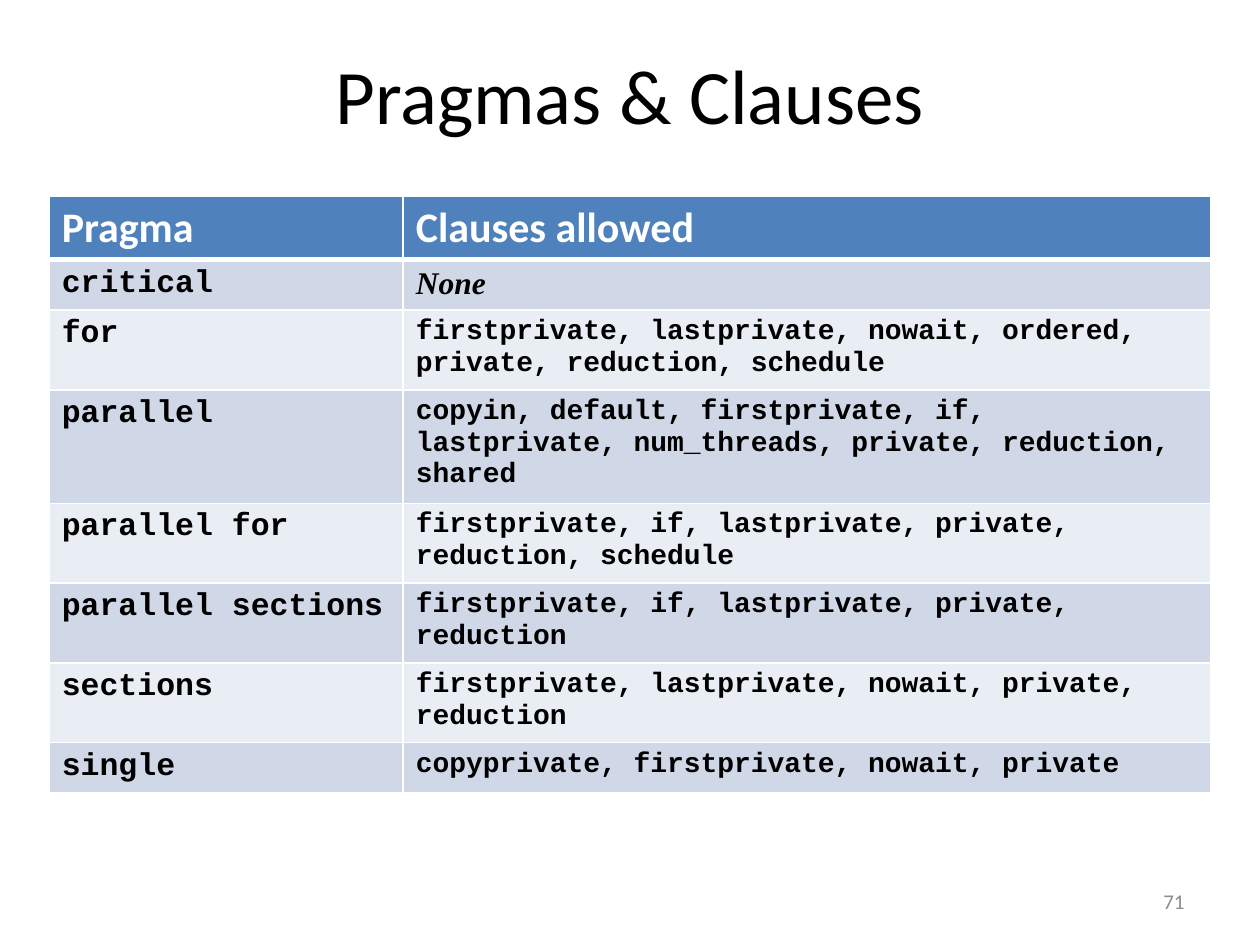
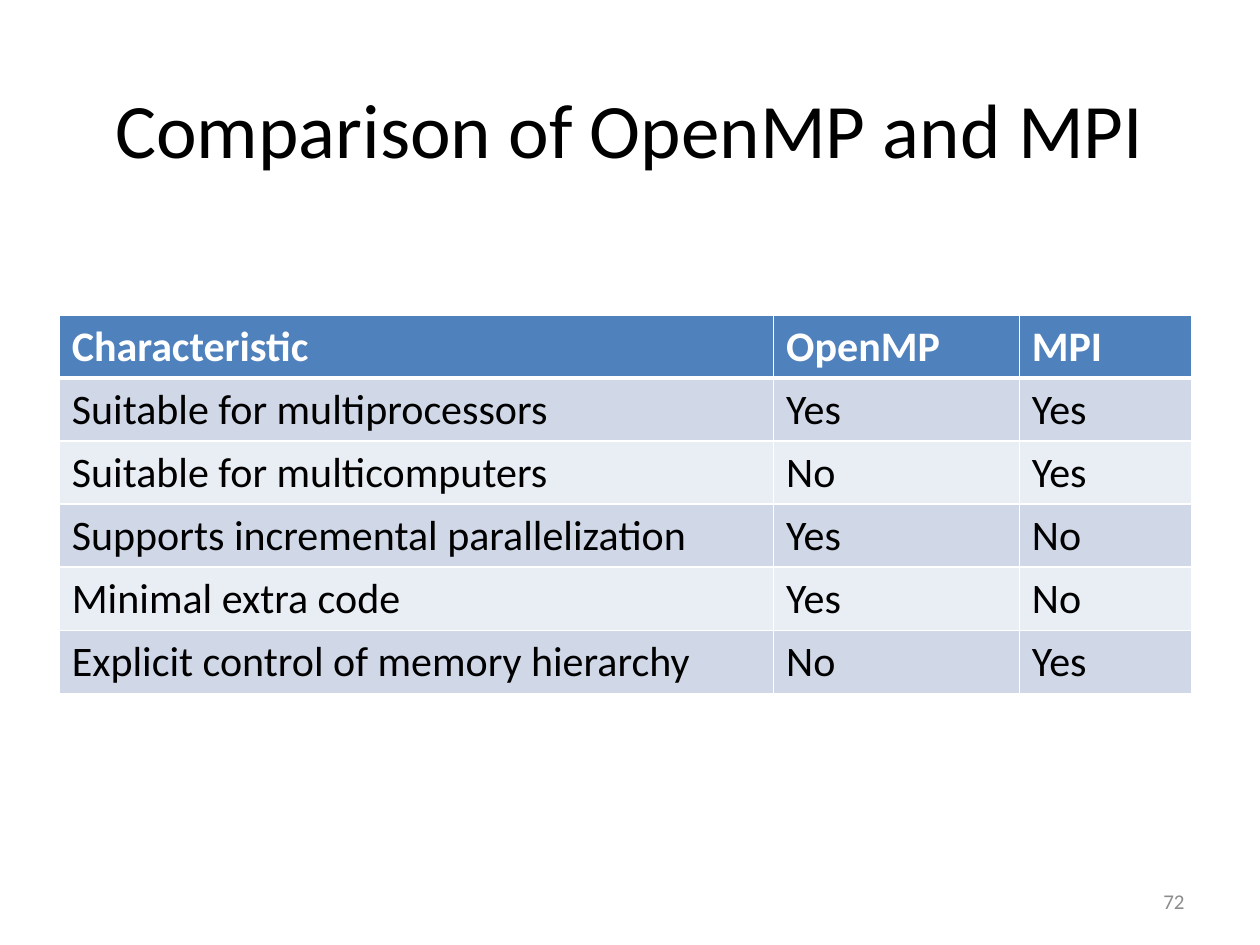
from itertools import product

from lxml import etree
from pptx import Presentation
from pptx import util as u
from pptx.dml import color
from pptx.enum import text
from pptx.oxml import ns

# Shared style: the grid has half-inch cells
COLUMNS, ROWS = 20, 15
WIDTH, HEIGHT = u.Inches(10), u.Inches(7.5)
WHITE, BLACK, GRAY = "FFFFFF", "000000", "8C8C8C"
HEADER_FILL, BAND_FILLS = "4F81BD", ("D0D8E8", "E9EDF4")

TITLE = {"name": "Calibri", "size": u.Pt(44), "color": BLACK}
HEADER = {"name": "Calibri", "size": u.Pt(24), "color": WHITE, "bold": True}
BODY = {**HEADER, "color": BLACK, "bold": False}
PRAGMA = {"name": "Courier New", "size": u.Pt(18), "color": BLACK, "bold": True}
CLAUSES = {**PRAGMA, "size": u.Pt(16)}
NONE = {**PRAGMA, "name": "Times New Roman", "italic": True}
NUMBER = {"name": "Calibri", "size": u.Pt(12), "color": GRAY}


def rgb(value):
    return color.RGBColor.from_string(value)


class Deck:
    """Holds the presentation, its grid and the current slide."""

    def __init__(self):
        self.presentation = Presentation()
        self.presentation.slide_width = WIDTH
        self.presentation.slide_height = HEIGHT
        self.slide = None

    def x(self, columns):
        return round(WIDTH * columns / COLUMNS)

    def y(self, rows):
        return round(HEIGHT * rows / ROWS)

    def box(self, left, top, width, height):
        return self.x(left), self.y(top), self.x(width), self.y(height)

    def add_words(self, frame, words, style, align=text.PP_ALIGN.LEFT):
        paragraph = frame.paragraphs[0]
        paragraph.alignment = align
        run = paragraph.add_run()
        run.text = words
        for name, value in style.items():
            if name == "color":
                run.font.color.rgb = rgb(value)
            else:
                setattr(run.font, name, value)

    def add_slide(self, title, title_top, title_height, number):
        layout = self.presentation.slide_layouts.get_by_name("Title Only")
        self.slide = self.presentation.slides.add_slide(layout)
        shape = self.slide.shapes.title
        shape.left, shape.top, shape.width, shape.height = self.box(
            1, title_top, 18, title_height)
        shape.text_frame.vertical_anchor = text.MSO_ANCHOR.MIDDLE
        self.add_words(shape.text_frame, title, TITLE, text.PP_ALIGN.CENTER)
        self.add_number(number)

    def add_number(self, number):
        shape = self.slide.shapes.add_textbox(*self.box(14.34, 13.9, 4.66, 0.8))
        frame = shape.text_frame
        frame.word_wrap = True
        frame.vertical_anchor = text.MSO_ANCHOR.MIDDLE
        self.add_words(frame, str(number), NUMBER, text.PP_ALIGN.RIGHT)

    def add_border(self, cell, side, points):
        line = etree.Element(ns.qn(f"a:{side}"), w=str(u.Pt(points)))
        fill = etree.SubElement(line, ns.qn("a:solidFill"))
        etree.SubElement(fill, ns.qn("a:srgbClr"), val=WHITE)
        cell.get_or_add_tcPr().append(line)

    def add_table(self, left, top, widths, row_height, rows, style_of):
        """Header first, then banded rows; style_of(column, words) styles the body."""
        shape = self.slide.shapes.add_table(
            len(rows), len(widths),
            *self.box(left, top, sum(widths), row_height * len(rows)))
        table = shape.table
        for column, width in zip(table.columns, widths):
            column.width = self.x(width)
        for i, j in product(range(len(rows)), range(len(widths))):
            cell, words = table.cell(i, j), rows[i][j]
            # The rule below the header is heavier
            for side, points in (("lnL", 1), ("lnR", 1),
                                 ("lnT", 3 if i == 1 else 1),
                                 ("lnB", 3 if i == 0 else 1)):
                self.add_border(cell._tc, side, points)
            cell.fill.solid()
            cell.fill.fore_color.rgb = rgb(
                BAND_FILLS[(i - 1) % 2] if i else HEADER_FILL)
            self.add_words(cell.text_frame, words,
                           style_of(j, words) if i else HEADER)


def pragma_style(column, words):
    if words == "None":
        return NONE
    return CLAUSES if column else PRAGMA


def main():
    deck = Deck()

    # Pragmas and the clauses they allow
    deck.add_slide("Pragmas & Clauses", 0.62, 1.72, 71)
    deck.add_table(0.78, 3.12, (5.62, 12.82), 0.8, (
        ("Pragma", "Clauses allowed"),
        ("critical", "None"),
        ("for", "firstprivate, lastprivate, nowait, ordered, "
                "private, reduction, schedule"),
        ("parallel", "copyin, default, firstprivate, if, lastprivate, "
                     "num_threads, private, reduction, shared"),
        ("parallel for", "firstprivate, if, lastprivate, private, "
                         "reduction, schedule"),
        ("parallel sections", "firstprivate, if, lastprivate, private, reduction"),
        ("sections", "firstprivate, lastprivate, nowait, private, reduction"),
        ("single", "copyprivate, firstprivate, nowait, private"),
    ), pragma_style)

    # Comparison of the two programming models
    deck.add_slide("Comparison of OpenMP and MPI", 0.78, 2.5, 72)
    deck.add_table(0.94, 5, (11.34, 3.9, 2.74), 0.82, (
        ("Characteristic", "OpenMP", "MPI"),
        ("Suitable for multiprocessors", "Yes", "Yes"),
        ("Suitable for multicomputers", "No", "Yes"),
        ("Supports incremental parallelization", "Yes", "No"),
        ("Minimal extra code", "Yes", "No"),
        ("Explicit control of memory hierarchy", "No", "Yes"),
    ), lambda column, words: BODY)

    deck.presentation.save("out.pptx")


if __name__ == "__main__":
    main()
